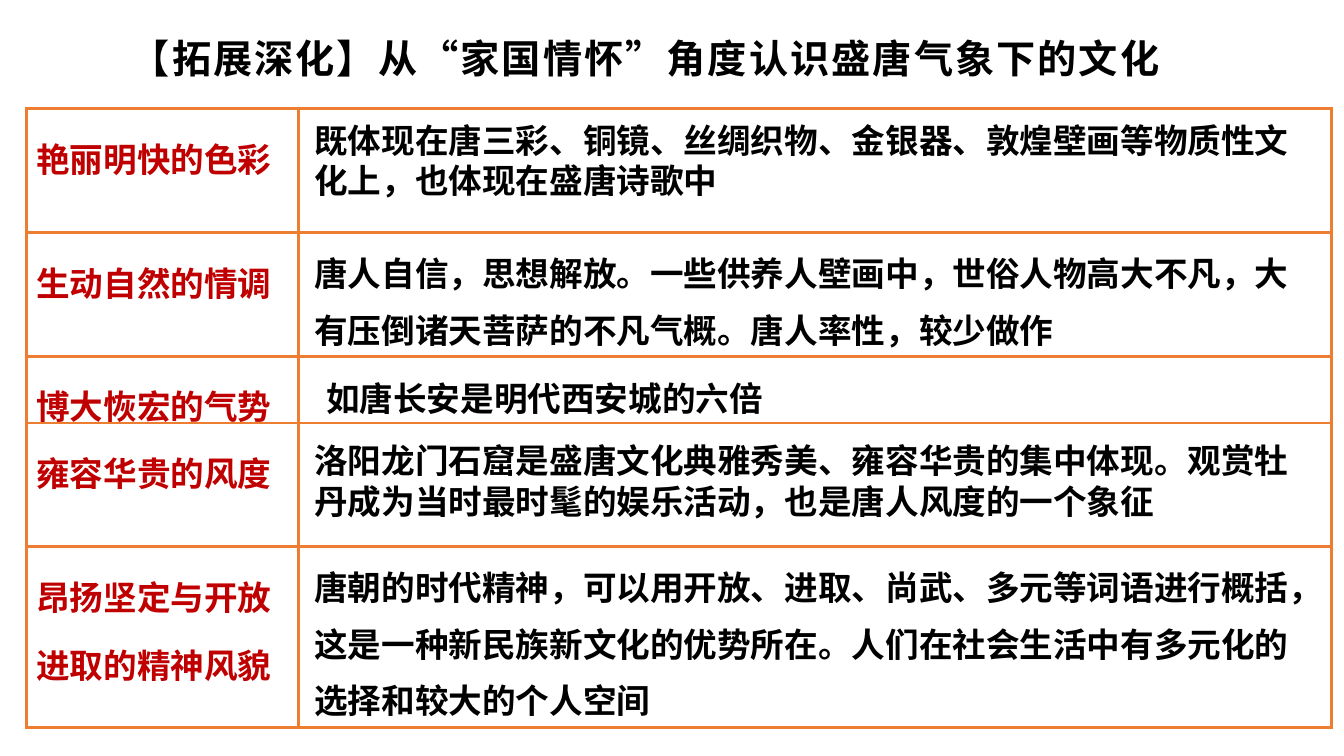
from typing import NamedTuple

from lxml.etree import SubElement
from pptx import Presentation
from pptx.dml.color import RGBColor
from pptx.enum.text import MSO_ANCHOR
from pptx.oxml.ns import qn
from pptx.util import Cm, Pt

BLACK = RGBColor(0x00, 0x00, 0x00)
RED = RGBColor(0xC0, 0x00, 0x00)
ORANGE = RGBColor(0xED, 0x7D, 0x31)
CHINESE_FONT = "Noto Sans CJK SC"
TIGHT, LOOSE = Pt(28.8), Pt(40.6)

TITLE = "【拓展深化】从“家国情怀”角度认识盛唐气象下的文化"


class Feature(NamedTuple):
    """A table row: label, row height, and the inset, top and spacing of its text."""
    label: str
    height: float
    inset: float
    top: float
    spacing: Pt
    detail: str


FEATURES = [
    Feature("艳丽明快的色彩", 3.12, 0, 0.16, TIGHT,
            "既体现在唐三彩、铜镜、丝绸织物、金银器、敦煌壁画等物质性文化上，也体现在盛唐诗歌中"),
    Feature("生动自然的情调", 3.12, 0, 3.1, LOOSE,
            "唐人自信，思想解放。一些供养人壁画中，世俗人物高大不凡，"
            "大有压倒诸天菩萨的不凡气概。唐人率性，较少做作"),
    Feature("博大恢宏的气势", 1.68, 0.3, 6.23, LOOSE,
            "如唐长安是明代西安城的六倍"),
    Feature("雍容华贵的风度", 3.12, 0, 8.23, TIGHT,
            "洛阳龙门石窟是盛唐文化典雅秀美、雍容华贵的集中体现。"
            "观赏牡丹成为当时最时髦的娱乐活动，也是唐人风度的一个象征"),
    Feature("昂扬坚定与开放进取的精神风貌", 4.55, 0, 11, LOOSE,
            "唐朝的时代精神，可以用开放、进取、尚武、多元等词语进行概括，"
            "这是一种新民族新文化的优势所在。人们在社会生活中有多元化的选择和较大的个人空间"),
]


def write(frame, text, size, color, spacing, font=CHINESE_FONT):
    """Put one bold paragraph in the frame and return its run."""
    frame.text = text
    para = frame.paragraphs[0]
    para.line_spacing = spacing
    span = para.runs[0]
    span.font.size = Pt(size)
    span.font.bold = True
    span.font.color.rgb = color
    span.font.name = font
    SubElement(span.font._element, qn("a:ea"), typeface=CHINESE_FONT)
    return span


def outline(cell):
    """Clear the cell's fill and draw its four borders."""
    properties = cell._tc.get_or_add_tcPr()
    for side in ("a:lnL", "a:lnR", "a:lnT", "a:lnB"):
        line = SubElement(properties, qn(side), w=str(Pt(2.25)))
        fill = SubElement(line, qn("a:solidFill"))
        SubElement(fill, qn("a:srgbClr"), val=str(ORANGE))
    cell.fill.background()


def add_title(page, left, top, width, height):
    """Place the letter-spaced heading in the given box."""
    box = page.shapes.add_textbox(Cm(left), Cm(top), Cm(width), Cm(height))
    box.text_frame.word_wrap = True
    box.text_frame.vertical_anchor = MSO_ANCHOR.MIDDLE
    span = write(box.text_frame, TITLE, 28, BLACK, 1.0)
    span.font._element.set("spc", "150")


def add_feature_table(page, left, top, label_width, detail_width):
    """Draw the grid with its red labels in the first column."""
    height = sum(feature.height for feature in FEATURES)
    graphic = page.shapes.add_table(len(FEATURES), 2, Cm(left), Cm(top),
                                    Cm(label_width + detail_width), Cm(height))
    table = graphic.table
    table.first_row = table.horz_banding = False
    table.columns[0].width = Cm(label_width)
    table.columns[1].width = Cm(detail_width)
    for row, feature in zip(table.rows, FEATURES):
        row.height = Cm(feature.height)
        for cell in row.cells:
            outline(cell)
        write(row.cells[0].text_frame, feature.label, 24, RED, 1.4, "Arial")


def add_details(page, left, top, width):
    """Lay the descriptions over the second column."""
    for feature in FEATURES:
        lines = 1 + len(feature.detail) // 30
        box = page.shapes.add_textbox(
            Cm(left + feature.inset), Cm(top + feature.top),
            Cm(width) if lines > 1 else Cm(11.51),
            lines * feature.spacing + Cm(0.25))
        box.text_frame.word_wrap = lines > 1
        write(box.text_frame, feature.detail, 24, BLACK, feature.spacing)


def main():
    """Build the slide and save it."""
    deck = Presentation()
    deck.slide_width, deck.slide_height = Cm(33.87), Cm(19.05)
    page = deck.slides.add_slide(deck.slide_layouts[6])
    add_title(page, 3.05, 0.71, 26.64, 1.52)
    add_feature_table(page, 0.66, 2.74, 6.86, 26.04)
    add_details(page, 7.67, 2.74, 25.86)
    deck.save("out.pptx")


if __name__ == "__main__":
    main()
